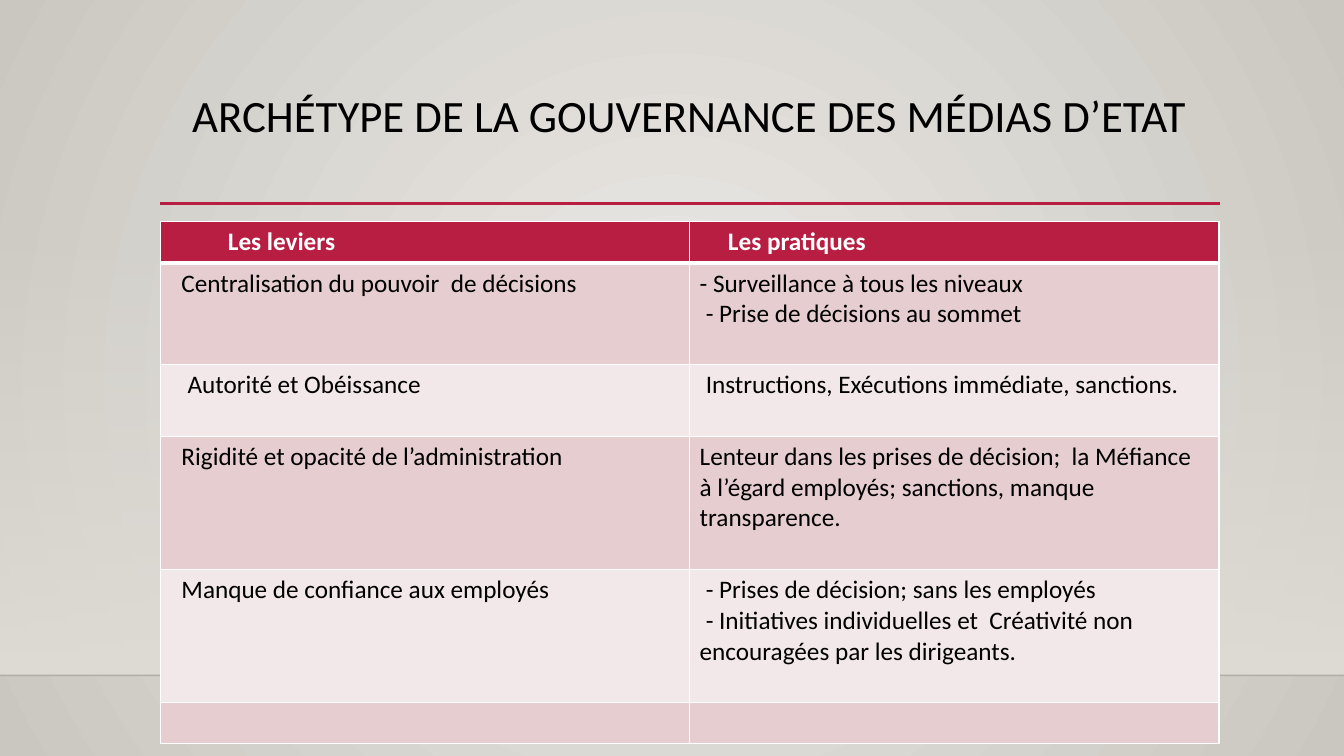
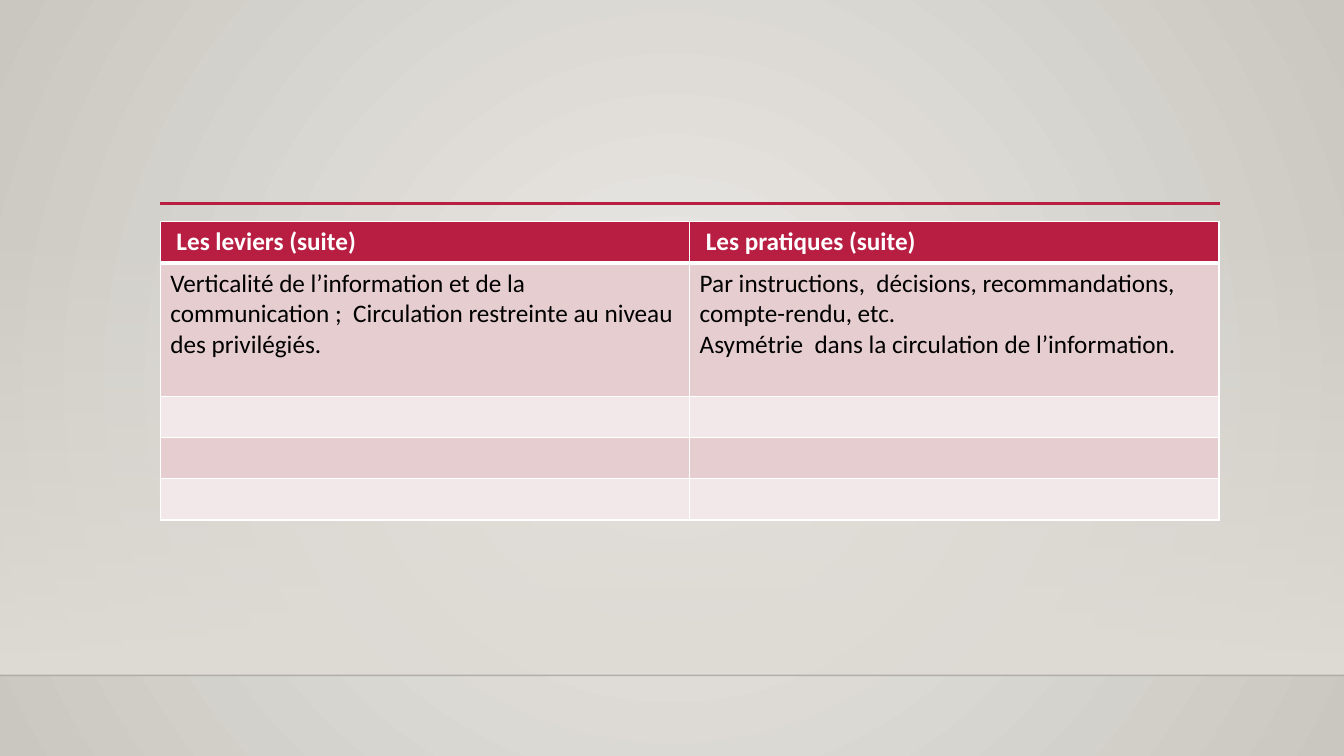
from dataclasses import dataclass

from lxml.etree import SubElement
from pptx import Presentation
from pptx.dml.color import RGBColor
from pptx.enum.shapes import MSO_CONNECTOR as Connector, MSO_SHAPE as Shape
from pptx.enum.text import MSO_ANCHOR as Anchor, MSO_AUTO_SIZE as AutoSize, PP_ALIGN as Align
from pptx.oxml.ns import qn
from pptx.util import Inches, Pt


@dataclass(frozen=True)
class Theme:
    font: str = "Calibri"
    title_size: int = 32
    table_size: int = 18
    text: str = "000000"
    white: str = "FFFFFF"
    accent: str = "B71E42"
    odd_row: str = "E6CDCF"
    even_row: str = "F3E8E9"
    glow: str = "ECEAE7"
    edge: str = "CAC7C1"
    band: str = "DFDBD5"
    floor: str = "000001"


theme = Theme()


def format_font(font, color, **values):
    for name, value in {"name": theme.font, **values}.items():
        setattr(font, name, value)
    font.color.rgb = RGBColor.from_string(color)


def set_alpha(parent, percent):
    color = next(parent.iter(qn("a:srgbClr")))
    SubElement(color, qn("a:alpha"), val=str(percent * 1000))


LEFT, TABLE_TOP, WIDTH = 1.59, 2.2, 10.5
BASE_ROW = 0.41

slides = [
    {
        "title": "ARCHÉTYPE DE LA GOUVERNANCE DES MÉDIAS D’ETAT",
        "heights": [BASE_ROW, 1.01, 0.71, 1.32, 1.32, BASE_ROW],
        "rows": [
            ([(0.57, "Les leviers")], [(0.28, "Les pratiques")]),
            (
                [(0.11, "Centralisation du pouvoir  de décisions")],
                [(0, "- Surveillance à tous les niveaux"), (0.06, "- Prise de décisions au sommet")],
            ),
            (
                [(0.17, "Autorité et Obéissance")],
                [(0.06, "Instructions, Exécutions immédiate, sanctions.")],
            ),
            (
                [(0.11, "Rigidité et opacité de l’administration")],
                [(0, "Lenteur dans les prises de décision;  la Méfiance à l’égard employés; "
                     "sanctions, manque transparence.")],
            ),
            (
                [(0.11, "Manque de confiance aux employés")],
                [(0.06, "- Prises de décision; sans les employés"),
                 (0.06, "- Initiatives individuelles et  Créativité non  encouragées par les dirigeants.")],
            ),
        ],
    },
    {
        "title": None,
        "heights": [BASE_ROW, 1.32] + [BASE_ROW] * 3,
        "rows": [
            ([(0.06, "Les leviers (suite)")], [(0.06, "Les pratiques (suite)")]),
            (
                [(0, "Verticalité de l’information et de la communication ;  "
                     "Circulation restreinte au niveau des privilégiés.")],
                [(0, "Par instructions,  décisions, recommandations, compte-rendu, etc."),
                 (0, "Asymétrie  dans la circulation de l’information.")],
            ),
        ],
    },
]

deck = Presentation()
deck.slide_width, deck.slide_height = Inches(13.33), Inches(7.5)
layout = deck.slide_layouts.get_by_name("Title Only")
pages = [deck.slides.add_slide(layout) for _ in slides]

backdrop = layout.background.fill
backdrop.gradient()
for stop, color in zip(backdrop.gradient_stops, (theme.glow, theme.edge)):
    stop.color.rgb = RGBColor.from_string(color)
gradient = next(layout.element.iter(qn("a:gradFill")))
gradient.remove(gradient.find(qn("a:lin")))
center = SubElement(gradient, qn("a:path"), path="circle")
SubElement(center, qn("a:fillToRect"), {side: "50000" for side in "ltrb"})

band = pages[0].shapes.add_shape(Shape.RECTANGLE, 0, Inches(2.21), deck.slide_width, Inches(4.49))
band.shadow.inherit = False
band.line.fill.background()
band.fill.gradient()
band.fill.gradient_angle = 270
for stop in band.fill.gradient_stops:
    stop.color.rgb = RGBColor.from_string(theme.band)
set_alpha(band.element, 0)

decor = [band]
for start, end, height, color, weight, alpha in (
    (0, 13.33, 6.7, theme.floor, 1, 20),
    (LEFT, 12.1, 2.02, theme.accent, 2.5, 100),
):
    rule = pages[0].shapes.add_connector(
        Connector.STRAIGHT, Inches(start), Inches(height), Inches(end), Inches(height)
    )
    rule.line.color.rgb = RGBColor.from_string(color)
    rule.line.width = Pt(weight)
    set_alpha(rule.element, alpha)
    SubElement(rule.element.spPr, qn("a:effectLst"))
    decor.append(rule)
for position, item in enumerate(decor, start=2):
    layout.shapes.element.insert(position, item.element)

for page, content in zip(pages, slides):
    title = page.shapes.title
    if content["title"]:
        title.left, title.top = Inches(LEFT), Inches(0.88)
        title.width, title.height = Inches(WIDTH), Inches(1.15)
        frame = title.text_frame
        frame.text = content["title"]
        for name, value in {
            "auto_size": AutoSize.NONE, "word_wrap": True, "vertical_anchor": Anchor.TOP
        }.items():
            setattr(frame, name, value)
        para = frame.paragraphs[0]
        para.alignment, para.line_spacing = Align.CENTER, 0.9
        format_font(para.runs[0].font, theme.text, size=Pt(theme.title_size))
    else:
        title.element.getparent().remove(title.element)

    heights = content["heights"]
    table = page.shapes.add_table(
        len(heights), 2, Inches(LEFT), Inches(TABLE_TOP), Inches(WIDTH), Inches(sum(heights))
    ).table
    for column in table.columns:
        column.width = Inches(WIDTH / 2)

    for row_index, height in enumerate(heights):
        header = row_index == 0
        table.rows[row_index].height = Inches(height)
        if header:
            fill_color = theme.accent
        else:
            fill_color = theme.odd_row if row_index % 2 else theme.even_row
        weights = {"L": 1, "R": 1, "T": 3 if row_index == 1 else 1, "B": 3 if header else 1}
        for column_index in range(2):
            cell = table.cell(row_index, column_index)
            properties = cell._tc.get_or_add_tcPr()
            for side, weight in weights.items():
                border = SubElement(properties, qn(f"a:ln{side}"), w=str(Pt(weight)))
                solid = SubElement(border, qn("a:solidFill"))
                SubElement(solid, qn("a:srgbClr"), val=theme.white)
            cell.fill.solid()
            cell.fill.fore_color.rgb = RGBColor.from_string(fill_color)
            if row_index >= len(content["rows"]):
                continue
            frame = cell.text_frame
            for index, (indent, text) in enumerate(content["rows"][row_index][column_index]):
                para = frame.add_paragraph() if index else frame.paragraphs[0]
                properties = para._p.get_or_add_pPr()
                properties.set("marL", "0")
                properties.set("indent", str(Inches(indent)))
                span = para.add_run()
                span.text = text
                format_font(
                    span.font, theme.white if header else theme.text,
                    size=Pt(theme.table_size), bold=header,
                )

deck.save("out.pptx")
